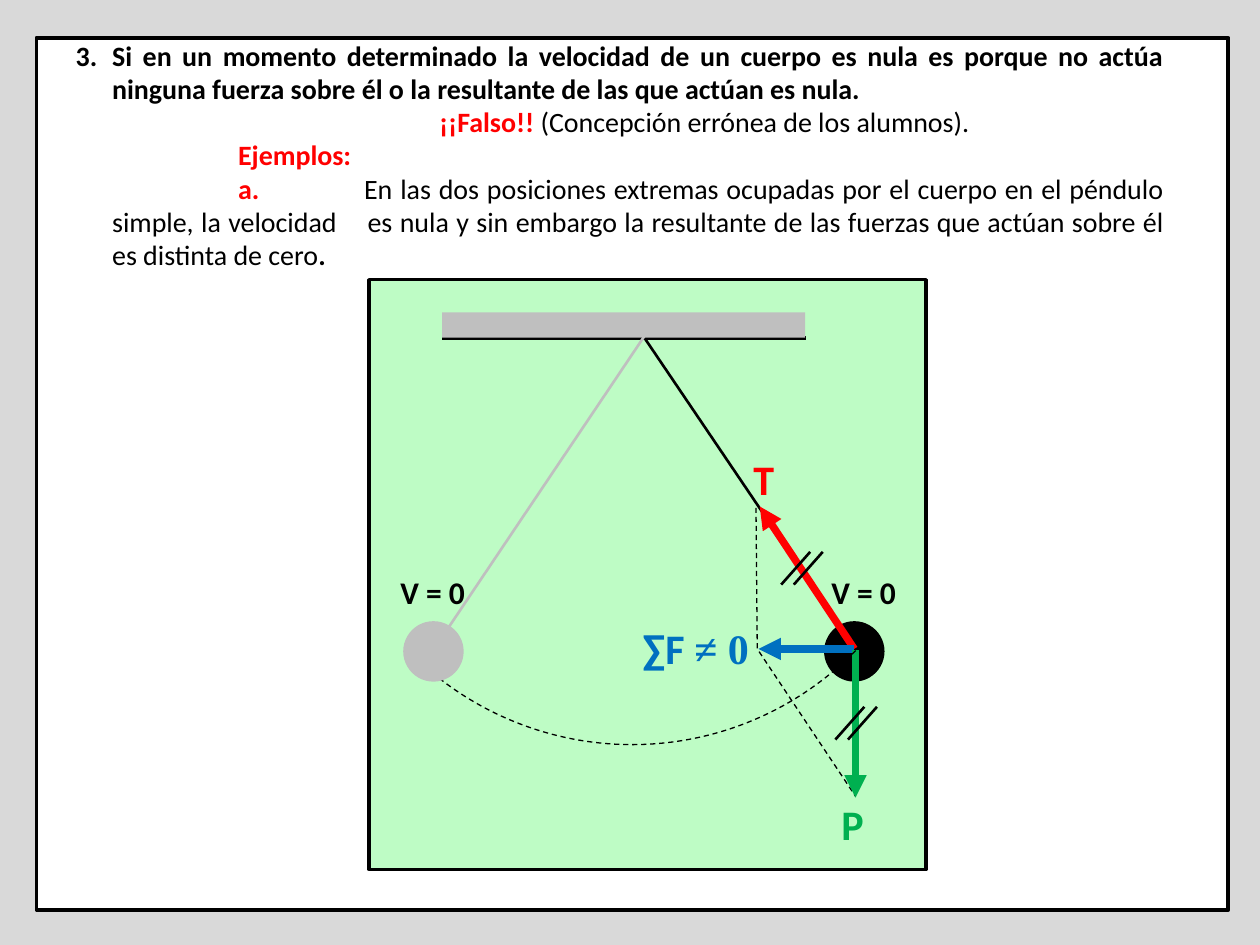
from lxml import etree
from pptx import Presentation
from pptx.dml.color import RGBColor
from pptx.enum.dml import MSO_LINE
from pptx.enum.shapes import MSO_CONNECTOR, MSO_SHAPE
from pptx.enum.text import MSO_ANCHOR, MSO_AUTO_SIZE, PP_ALIGN
from pptx.oxml.ns import qn
from pptx.util import Inches, Pt

COLORS = {
    "background": "D9D9D9", "white": "FFFFFF", "black": "000000",
    "gray": "BFBFBF", "panel": "2AF642", "red": "FF0000",
    "blue": "0070C0", "green": "00B050",
}


def rgb(name):
    return RGBColor.from_string(COLORS[name])


def add_xml(parent, tag, **attributes):
    child = etree.SubElement(parent, qn(tag))
    for name, value in attributes.items():
        child.set(name, str(value))
    return child


def style_line(line, color, width, dashed=False):
    line.color.rgb = rgb(color)
    line.width = Pt(width)
    if dashed:
        line.dash_style = MSO_LINE.DASH


def add_figure(shapes, kind, box, fill=None, line=None, opacity=None):
    """Preset shape; line is (color, width[, dashed]), opacity a percentage."""
    shape = shapes.add_shape(kind, *map(Inches, box))
    shape.shadow.inherit = False
    if fill:
        shape.fill.solid()
        shape.fill.fore_color.rgb = rgb(fill)
    else:
        shape.fill.background()
    if opacity:
        color = next(shape.element.iter(qn("a:srgbClr")))
        add_xml(color, "a:alpha", val=opacity * 1000)
    if line:
        style_line(shape.line, *line)
    else:
        shape.line.fill.background()
    return shape


def add_line(shapes, start, end, color, width, arrow=False):
    points = map(Inches, (*start, *end))
    line = shapes.add_connector(MSO_CONNECTOR.STRAIGHT, *points)
    style_line(line.line, color, width)
    if arrow:
        add_xml(line.element.spPr.find(qn("a:ln")), "a:tailEnd", type="triangle")
    add_xml(line.element.spPr, "a:effectLst")


def add_run(paragraph, text, color, size, bold=True, name="Calibri"):
    run = paragraph.add_run()
    run.text = text
    formats = {"name": name, "size": Pt(size), "bold": bold}
    for attribute, value in formats.items():
        setattr(run.font, attribute, value)
    run.font.color.rgb = rgb(color)


def add_label(shapes, box, color, size, *pieces):
    """Text box whose pieces are (text, font name) pairs."""
    label = shapes.add_textbox(*map(Inches, box))
    label.text_frame.word_wrap = True
    label.text_frame.auto_size = MSO_AUTO_SIZE.SHAPE_TO_FIT_TEXT
    for text, name in pieces:
        add_run(label.text_frame.paragraphs[0], text, color, size, name=name)


def format_paragraph(paragraph, alignment, number=None, tabs=()):
    formats = {"alignment": alignment, "line_spacing": Pt(19),
               "space_before": Pt(0), "space_after": Pt(0)}
    for attribute, value in formats.items():
        setattr(paragraph, attribute, value)
    properties = paragraph._p.get_or_add_pPr()
    for attribute, value in {"marL": Inches(0.29), "indent": -Inches(0.29),
                             "defTabSz": Inches(1)}.items():
        properties.set(attribute, str(int(value)))
    if number:
        add_xml(properties, "a:buFont", typeface="+mj-lt")
        add_xml(properties, "a:buAutoNum", type="arabicPeriod", startAt=number)
    else:
        add_xml(properties, "a:buNone")
    tab_list = add_xml(properties, "a:tabLst")
    for position in tabs:
        add_xml(tab_list, "a:tab", pos=int(Inches(position)), algn="l")


def fill_body(body):
    box = {"left": 0.5, "top": 0.38, "width": 8.84, "height": 1.7}
    for attribute, value in box.items():
        setattr(body, attribute, Inches(value))
    frame = body.text_frame
    frame.word_wrap = True
    frame.auto_size = MSO_AUTO_SIZE.SHAPE_TO_FIT_TEXT
    frame.vertical_anchor = MSO_ANCHOR.MIDDLE
    justify, tabs = PP_ALIGN.JUSTIFY, (-0.87, -0.5)
    # Alignment, number, tab stops, runs of (text, color, bold)
    content = [
        (justify, 3, tabs, [
            ("Si en un momento determinado la velocidad de un cuerpo es nula es "
             "porque no actúa ninguna fuerza sobre él o la resultante de las que "
             "actúan es nula. ", "black", True)]),
        (PP_ALIGN.CENTER, None, tabs, [
            ("\t\t ¡¡Falso!! ", "red", True),
            ("(Concepción errónea de los alumnos).", "black", False)]),
        (justify, None, tabs, [("\t\tEjemplos:", "red", True)]),
        (justify, None, (*tabs, 0.49), [
            ("\t\ta.\t", "red", True),
            ("En las dos posiciones extremas ocupadas por el cuerpo en el péndulo "
             "simple, la velocidad \tes nula y sin embargo la resultante de las "
             "fuerzas que actúan sobre él es distinta de cero", "black", False),
            (".", "black", True)]),
    ]
    for index, (alignment, number, stops, runs) in enumerate(content):
        paragraph = frame.paragraphs[0] if index == 0 else frame.add_paragraph()
        format_paragraph(paragraph, alignment, number, stops)
        for text, color, bold in runs:
            add_run(paragraph, text, color, 16, bold)


def add_pendulum(shapes, rod_start, rod_end, ball_left, color):
    group = shapes.add_group_shape().shapes
    add_line(group, rod_start, rod_end, color, 1.5)
    add_figure(group, MSO_SHAPE.OVAL, (ball_left, 4.93, 0.48, 0.48), color)


def add_force(shapes, start, end, color, label_box, *pieces):
    group = shapes.add_group_shape().shapes
    add_line(group, start, end, color, 4.25, arrow=True)
    add_label(group, label_box, color, 24, *pieces)


def add_guides(shapes):
    builder = shapes.build_freeform(Inches(6), Inches(4.03))
    corners = [(6.01, 5.15), (6.79, 6.32)]
    builder.add_line_segments(
        [(Inches(x), Inches(y)) for x, y in corners], close=False)
    guides = builder.convert_to_shape()
    guides.shadow.inherit = False
    guides.fill.background()
    style_line(guides.line, "black", 0.75, dashed=True)


def main():
    presentation = Presentation()
    presentation.slide_width, presentation.slide_height = Inches(10), Inches(7.5)
    slide = presentation.slides.add_slide(presentation.slide_layouts[1])
    slide.background.fill.solid()
    slide.background.fill.fore_color.rgb = rgb("background")
    shapes = slide.shapes
    title, body = slide.placeholders
    title.element.getparent().remove(title.element)

    # Frame behind the statement
    frame = add_figure(shapes, MSO_SHAPE.RECTANGLE, (0.29, 0.3, 9.46, 6.92),
                       "white", ("black", 2.25))
    body.element.addprevious(frame.element)
    fill_body(body)

    # Diagram panel and parallelogram of forces
    add_figure(shapes, MSO_SHAPE.RECTANGLE, (2.93, 2.22, 4.42, 4.68),
               "panel", ("black", 2), opacity=30)
    add_guides(shapes)

    # Pendulum at the right end, with its forces
    add_pendulum(shapes, (6.67, 4.98), (5.1, 2.66), 6.54, "black")
    add_force(shapes, (6.78, 5.15), (6.03, 4.02), "red",
              (5.88, 3.55, 0.72, 0.51), ("T", "Calibri"))
    add_force(shapes, (6.78, 5.15), (6.02, 5.15), "blue",
              (5, 4.89, 1.18, 0.5), ("∑F ", "Calibri"), ("≠ 0", "Times New Roman"))
    add_force(shapes, (6.79, 5.16), (6.79, 6.33), "green",
              (6.58, 6.29, 0.72, 0.51), ("P", "Calibri"))

    # Ceiling
    ceiling = shapes.add_group_shape().shapes
    add_line(ceiling, (3.51, 2.68), (6.4, 2.68), "black", 2.25)
    add_figure(ceiling, MSO_SHAPE.RECTANGLE, (3.51, 2.48, 2.88, 0.2), "gray")

    # Swing path and pendulum at the left end
    swing = add_figure(shapes, MSO_SHAPE.ARC, (2.53, 0.94, 4.97, 4.97),
                       line=("black", 0.75, True))
    swing.adjustments[0], swing.adjustments[1] = 162, 0.96
    swing.rotation = 134.4
    add_pendulum(shapes, (3.56, 4.98), (5.12, 2.66), 3.2, "gray")

    # Double marks on the tension and the weight
    marks = shapes.add_group_shape().shapes
    for left, bottom in [(6.2, 4.64), (6.63, 5.87)]:
        for x in (left, left + 0.1):
            add_line(marks, (x, bottom), (x + 0.23, bottom - 0.26), "black", 1.5)

    # Zero speed at both ends
    for left in (3.08, 6.5):
        add_label(shapes, (left, 4.5, 0.78, 0.4), "black", 18, ("V = 0", "Calibri"))

    presentation.save("out.pptx")


if __name__ == "__main__":
    main()
